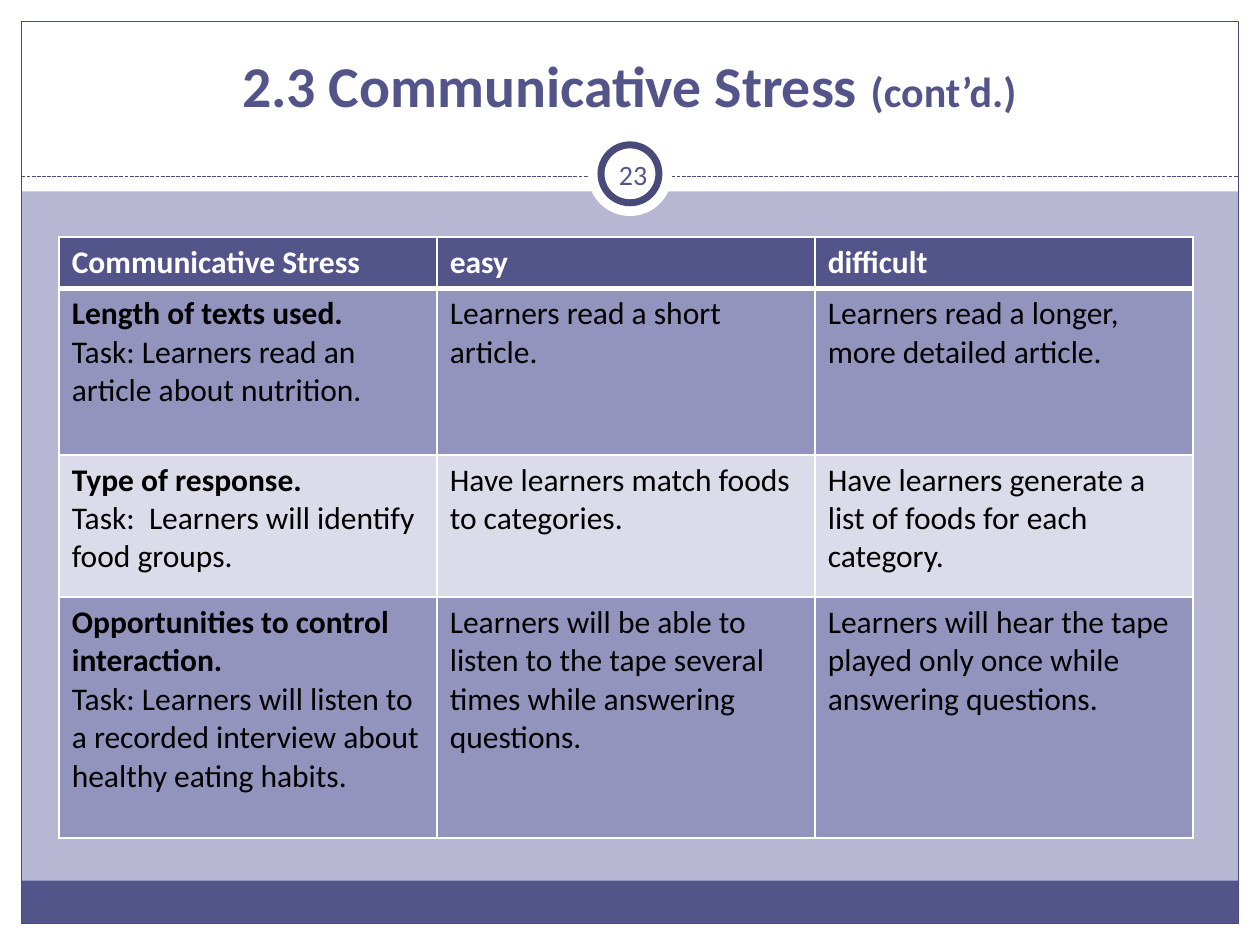
from dataclasses import dataclass

from lxml import etree
from pptx import Presentation
from pptx.dml.color import RGBColor
from pptx.enum.dml import MSO_LINE
from pptx.enum.shapes import MSO_CONNECTOR, MSO_SHAPE
from pptx.enum.text import MSO_ANCHOR, PP_ALIGN
from pptx.oxml.ns import qn
from pptx.util import Inches, Pt

RECT, OVAL = MSO_SHAPE.RECTANGLE, MSO_SHAPE.OVAL
STRAIGHT, DASH = MSO_CONNECTOR.STRAIGHT, MSO_LINE.SQUARE_DOT
CENTER, MIDDLE = PP_ALIGN.CENTER, MSO_ANCHOR.MIDDLE
BLANK_LAYOUT = 6


@dataclass(frozen=True)
class Theme:
    """Colours, font and type sizes of the slide."""
    font: str = "Calibri"
    white: str = "FFFFFF"
    ink: str = "000000"
    indigo: str = "53548A"
    outline: str = "494A7A"
    backdrop: str = "B7B7D4"
    band_dark: str = "9394BE"
    band_light: str = "DBDBE9"
    title: float = 33
    suffix: float = 24
    body: float = 18
    number: float = 16


THEME = Theme()
WIDTH, HEIGHT = 10, 7.5
MARGIN = 0.17
HEADER_HEIGHT = 1.52
FOOTER_HEIGHT = 0.34
DIVIDER_Y = 1.4
BADGE_Y = 1.38
TABLE_LEFT, TABLE_TOP, COLUMN_WIDTH = 0.47, 1.88, 3
ROW_HEIGHTS = (0.41, 1.32, 1.13, 1.91)
ROWS = (
    (("Communicative Stress",), ("easy",), ("difficult",)),
    (("Length of texts used.", "Task: Learners read an article about nutrition."),
     ("Learners read a short article.",),
     ("Learners read a longer, more detailed article.",)),
    (("Type of response.", "Task:  Learners will identify food groups."),
     ("Have learners match foods to categories.",),
     ("Have learners generate a list of foods for each category.",)),
    (("Opportunities to control interaction.",
      "Task: Learners will listen to a recorded interview about healthy eating habits."),
     ("Learners will be able to listen to the tape several times while answering questions.",),
     ("Learners will hear the tape played only once while answering questions.",)),
)


def color(value):
    """Turn a hex string into a colour."""
    return RGBColor.from_string(value)


def apply(target, formats):
    """Set each attribute named in a dict."""
    for key, value in formats.items():
        setattr(target, key, value)


def add_panel(slide, kind, box, fill=None, line=None, weight=0.75):
    """Add a flat preset shape."""
    panel = slide.shapes.add_shape(kind, *map(Inches, box))
    panel.shadow.inherit = False
    if fill:
        panel.fill.solid()
        panel.fill.fore_color.rgb = color(fill)
    else:
        panel.fill.background()
    if line:
        panel.line.color.rgb = color(line)
        panel.line.width = Pt(weight)
    else:
        panel.line.fill.background()


def add_disc(slide, diameter, line=None, weight=0.75):
    """Add a white disc centred on the badge."""
    box = (WIDTH / 2 - diameter / 2, BADGE_Y - diameter / 2, diameter, diameter)
    add_panel(slide, OVAL, box, THEME.white, line, weight)


def add_divider(slide):
    """Add the dashed line under the title."""
    ends = (MARGIN, DIVIDER_Y, WIDTH - MARGIN, DIVIDER_Y)
    divider = slide.shapes.add_connector(STRAIGHT, *map(Inches, ends))
    divider.line.color.rgb = color(THEME.outline)
    apply(divider.line, {"width": Pt(0.75), "dash_style": DASH})
    etree.SubElement(divider._element.spPr, qn("a:effectLst"))


def add_run(paragraph, text, size, shade, bold=False):
    """Add one formatted run."""
    run = paragraph.add_run()
    run.text = text
    apply(run.font, {"name": THEME.font, "size": Pt(size), "bold": bold})
    run.font.color.rgb = color(shade)


def add_label(slide, box, runs, inset):
    """Add a centred line of text."""
    frame = slide.shapes.add_textbox(*map(Inches, box)).text_frame
    apply(frame, {"word_wrap": True, "vertical_anchor": MIDDLE})
    apply(frame, {f"margin_{side}": Inches(inset)
                  for side in ("left", "top", "right", "bottom")})
    paragraph = frame.paragraphs[0]
    paragraph.alignment = CENTER
    for run in runs:
        add_run(paragraph, *run)


def set_borders(cell, weights):
    """Draw white cell borders from a dict of side and weight."""
    properties = cell._tc.get_or_add_tcPr()
    for index, (side, weight) in enumerate(weights.items()):
        border = etree.Element(qn(f"a:ln{side}"), w=str(Pt(weight)))
        fill = etree.SubElement(border, qn("a:solidFill"))
        etree.SubElement(fill, qn("a:srgbClr"), val=THEME.white)
        properties.insert(index, border)


def fill_cell(cell, lines, row, column):
    """Write and style one table cell."""
    header = row == 0
    band = THEME.band_dark if row % 2 else THEME.band_light
    cell.fill.solid()
    cell.fill.fore_color.rgb = color(THEME.indigo if header else band)
    set_borders(cell, {"L": 1, "R": 1, "T": 3 if row == 1 else 1, "B": 3 if header else 1})
    for index, text in enumerate(lines):
        frame = cell.text_frame
        paragraph = frame.add_paragraph() if index else frame.paragraphs[0]
        bold = header or (column == 0 and index == 0)
        add_run(paragraph, text, THEME.body, THEME.white if header else THEME.ink, bold)


def add_stress_table(slide):
    """Add the table of easy and difficult tasks."""
    columns = len(ROWS[0])
    box = (TABLE_LEFT, TABLE_TOP, COLUMN_WIDTH * columns, sum(ROW_HEIGHTS))
    table = slide.shapes.add_table(len(ROWS), columns, *map(Inches, box)).table
    for row, (height, contents) in enumerate(zip(ROW_HEIGHTS, ROWS)):
        table.rows[row].height = Inches(height)
        for column, lines in enumerate(contents):
            fill_cell(table.cell(row, column), lines, row, column)


def add_frame(slide):
    """Add the white margins, footer band, outline and badge."""
    inner_width = WIDTH - 2 * MARGIN
    bottom = HEIGHT - MARGIN
    for box in ((0, bottom, WIDTH, MARGIN), (0, 0, WIDTH, HEADER_HEIGHT),
                (0, 0, MARGIN, HEIGHT), (WIDTH - MARGIN, 0, MARGIN, HEIGHT)):
        add_panel(slide, RECT, box, THEME.white)
    add_panel(slide, RECT, (MARGIN, bottom - FOOTER_HEIGHT, inner_width, FOOTER_HEIGHT),
              THEME.indigo)
    add_panel(slide, RECT, (MARGIN, MARGIN, inner_width, HEIGHT - 2 * MARGIN),
              line=THEME.outline)
    add_divider(slide)
    add_disc(slide, 0.67)
    add_disc(slide, 0.46, THEME.outline, 4)


def main():
    """Build and save the slide."""
    deck = Presentation()
    apply(deck, {"slide_width": Inches(WIDTH), "slide_height": Inches(HEIGHT)})
    slide = deck.slides.add_slide(deck.slide_layouts[BLANK_LAYOUT])
    slide.background.fill.solid()
    slide.background.fill.fore_color.rgb = color(THEME.backdrop)
    add_frame(slide)
    add_label(slide, (0.33, 0.16, 9.33, 1.02),
              (("2.3 Communicative Stress ", THEME.title, THEME.indigo, True),
               ("(cont’d.)", THEME.suffix, THEME.indigo, True)), 0.05)
    add_stress_table(slide)
    add_label(slide, (4.77, 1.12, 0.51, 0.52), (("23", THEME.number, THEME.indigo),), 0.05)
    deck.save("out.pptx")


if __name__ == "__main__":
    main()
